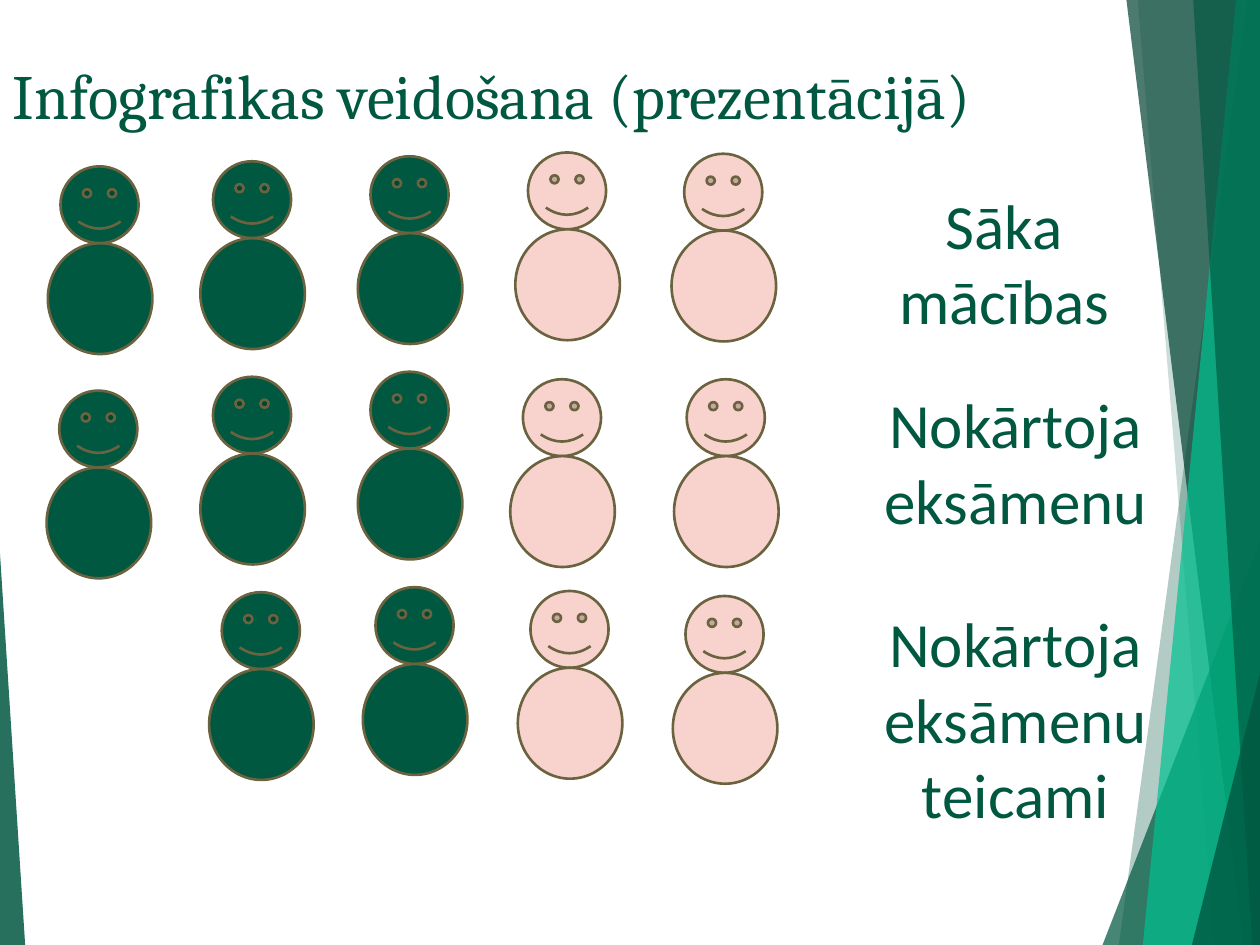
import pptx
import pptx.dml.color
import pptx.enum.shapes
import pptx.enum.text
import pptx.oxml
import pptx.oxml.ns
import pptx.util

Inches = pptx.util.Inches
RGBColor = pptx.dml.color.RGBColor
Shape = pptx.enum.shapes.MSO_SHAPE
Align = pptx.enum.text.PP_ALIGN

GREEN = RGBColor(0x00, 0x58, 0x41)
DARK_GREEN = RGBColor(0x00, 0x42, 0x31)
MINT = RGBColor(0x00, 0xC2, 0x8F)
PINK = RGBColor(0xF8, 0xD2, 0xCC)
OLIVE = RGBColor(0x6B, 0x63, 0x3F)

BANDS = [
    (GREEN, 85, [(0, 4.39), (0.2, 7.5), (0, 7.5)]),
    (GREEN, 30, [(9.9, 0), (8.88, 7.5), (10, 7.5), (10, 0)]),
    (GREEN, 20, [(9.03, 0), (9.64, 7.5), (10, 7.5), (10, 0)]),
    (GREEN, 72, [(8.75, 7.5), (10, 4.29), (10, 7.5)]),
    (DARK_GREEN, 70, [(8.94, 0), (9.87, 7.5), (10, 7.5), (10, 0)]),
    (MINT, 70, [(9.81, 0), (9.07, 7.5), (10, 7.5), (10, 0)]),
    (GREEN, 65, [(9.47, 0), (9.94, 7.5), (10, 7.5), (10, 0)]),
    (GREEN, 80, [(9.46, 7.5), (10, 5.35), (10, 7.5)]),
]

GREEN_PEOPLE = [
    (0.48, 1.32), (1.69, 1.28), (2.94, 1.24),
    (0.47, 3.1), (1.69, 2.99), (2.94, 2.95),
    (1.76, 4.7), (2.98, 4.66),
]
PINK_PEOPLE = [
    (4.19, 1.21), (5.43, 1.22),
    (4.15, 3.01), (5.45, 3.01),
    (4.21, 4.69), (5.44, 4.73),
]

LABELS = [
    ("Sāka\vmācības", 6.5, 1.43, 1.31),
    ("Nokārtoja eksāmenu", 6.59, 3.01, 1.31),
    ("Nokārtoja eksāmenu teicami", 6.59, 4.75, 1.92),
]


class Infographic:
    text_size = pptx.util.Pt(36)
    outline_width = pptx.util.Pt(1.5)

    def __init__(self, page):
        self.page = page

    def band(self, color, opacity, points):
        corners = [(Inches(x), Inches(y)) for x, y in points]
        builder = self.page.shapes.build_freeform(*corners[0])
        builder.add_line_segments(corners[1:], close=True)
        shape = builder.convert_to_shape()
        shape.shadow.inherit = False
        shape.line.fill.background()
        shape.fill.solid()
        shape.fill.fore_color.rgb = color
        tint = shape.fill._xPr.find(".//" + pptx.oxml.ns.qn("a:srgbClr"))
        alpha = pptx.oxml.parse_xml(
            f'<a:alpha {pptx.oxml.ns.nsdecls("a")} val="{opacity * 1000}"/>')
        tint.append(alpha)

    def person(self, left, top, color):
        group = self.page.shapes.add_group_shape()
        parts = [
            (Shape.SMILEY_FACE, left, top, 0.62, 0.61),
            (Shape.OVAL, left - 0.1, top + 0.61, 0.83, 0.88),
        ]
        for kind, *bounds in parts:
            shape = group.shapes.add_shape(kind, *map(Inches, bounds))
            shape.shadow.inherit = False
            shape.fill.solid()
            shape.fill.fore_color.rgb = color
            shape.line.color.rgb = OLIVE
            shape.line.width = self.outline_width

    def text(self, words, left, top, width, height, font, align):
        box = self.page.shapes.add_textbox(*map(Inches, (left, top, width, height)))
        box.text_frame.word_wrap = True
        para = box.text_frame.paragraphs[0]
        para.text = words
        para.alignment = align
        para.font.name = font
        para.font.size = self.text_size
        para.font.color.rgb = GREEN


def main():
    deck = pptx.Presentation()
    deck.slide_width, deck.slide_height = Inches(10), Inches(7.5)
    slide = Infographic(deck.slides.add_slide(deck.slide_layouts[6]))

    for band in BANDS:
        slide.band(*band)
    slide.text("Infografikas veidošana (prezentācijā)", 0, 0.4, 8.62, 1.45,
               "Cambria", Align.LEFT)
    for color, people in ((GREEN, GREEN_PEOPLE), (PINK, PINK_PEOPLE)):
        for left, top in people:
            slide.person(left, top, color)
    for words, left, top, height in LABELS:
        slide.text(words, left, top, 2.94, height, "Calibri", Align.CENTER)

    deck.save("out.pptx")


if __name__ == "__main__":
    main()
